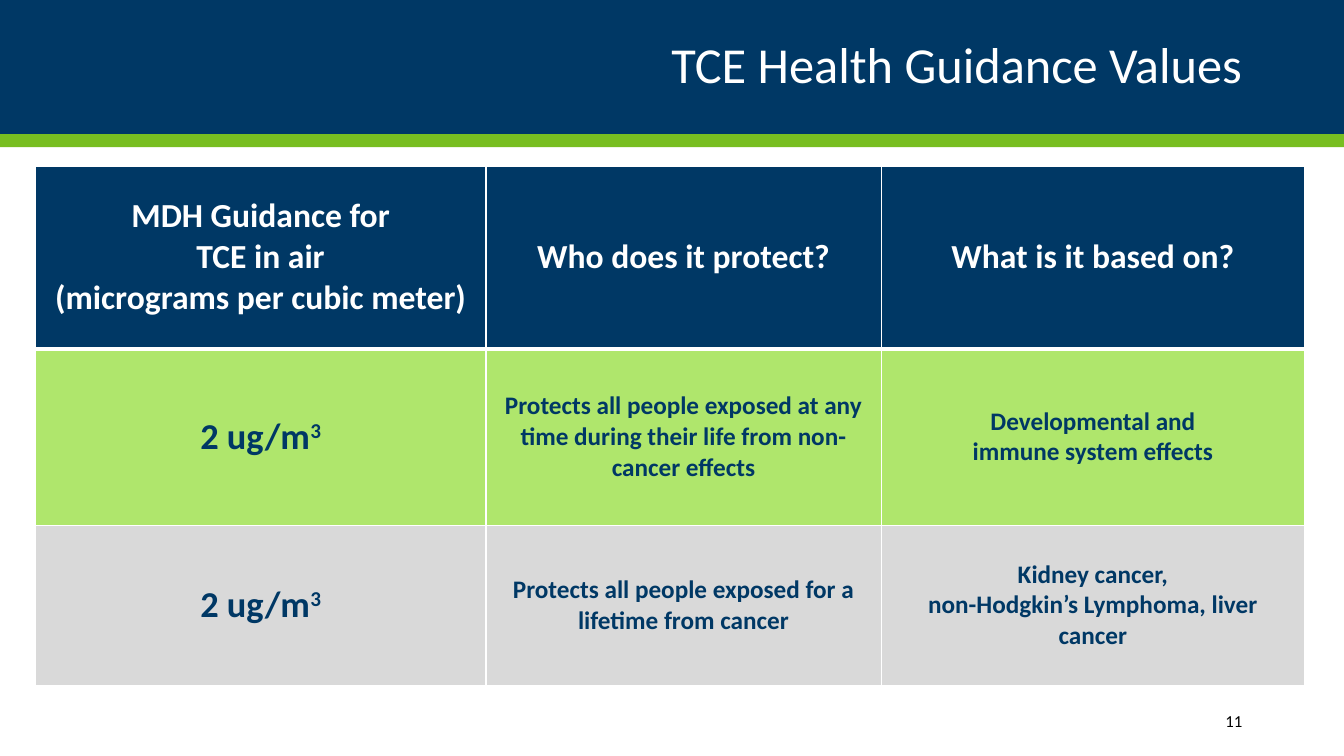
"""Builds the slide of TCE health guidance values."""
from lxml.etree import SubElement
from pptx import Presentation
from pptx.dml.color import RGBColor
from pptx.enum.shapes import MSO_SHAPE
from pptx.enum.text import MSO_ANCHOR, PP_ALIGN
from pptx.oxml.ns import qn
from pptx.util import Inches, Pt

COLORS = {
    "navy": "003865",
    "green": "78BE21",
    "lime": "AFE66C",
    "gray": "D9D9D9",
    "white": "FFFFFF",
    "black": "000000",
}

COLUMN_WIDTHS = [4.47, 3.92, 4.2]
ROW_HEIGHTS = [1.81, 1.75, 1.59]
ROW_FILLS = ["navy", "lime", "gray"]
GUIDANCE = [
    [
        "MDH Guidance for\nTCE in air\n(micrograms per cubic meter)",
        "Who does it protect?",
        "What is it based on?",
    ],
    [
        "2 ug/m^3",
        "Protects all people exposed at any time during their life from non-cancer effects",
        "Developmental and\nimmune system effects",
    ],
    [
        "2 ug/m^3",
        "Protects all people exposed for a lifetime from cancer",
        "Kidney cancer,\nnon-Hodgkin’s Lymphoma, liver cancer",
    ],
]


def rgb(name):
    return RGBColor.from_string(COLORS[name])


def write_text(frame, text, size, color, bold=False, align=PP_ALIGN.CENTER,
               spacing=None, font="Calibri"):
    frame.word_wrap = True
    for index, line in enumerate(text.split("\n")):
        paragraph = frame.paragraphs[0] if index == 0 else frame.add_paragraph()
        paragraph.alignment = align
        paragraph.line_spacing = spacing
        for level, part in enumerate(line.split("^")):
            run = paragraph.add_run()
            run.text = part
            run.font.name = font
            run.font.size = Pt(size)
            run.font.bold = bold
            run.font.color.rgb = rgb(color)
            if level:
                run._r.get_or_add_rPr().set("baseline", "30000")


class GuidanceSlide:
    def __init__(self, slide, border="white"):
        self.slide = slide
        self.border = border

    def band(self, top, height, color):
        band = self.slide.shapes.add_shape(
            MSO_SHAPE.RECTANGLE, 0, Inches(top), Inches(13.33), Inches(height))
        band.shadow.inherit = False
        band.fill.solid()
        band.fill.fore_color.rgb = rgb(color)
        band.line.fill.background()

    def text(self, left, top, width, height, text, **style):
        frame = self.slide.shapes.add_textbox(
            Inches(left), Inches(top), Inches(width), Inches(height)).text_frame
        frame.vertical_anchor = MSO_ANCHOR.MIDDLE
        write_text(frame, text, **style)

    def cell_borders(self, cell, top, bottom):
        properties = cell._tc.get_or_add_tcPr()
        for side, width in {"L": 1, "R": 1, "T": top, "B": bottom}.items():
            line = SubElement(properties, qn(f"a:ln{side}"), w=str(Pt(width)))
            fill = SubElement(line, qn("a:solidFill"))
            SubElement(fill, qn("a:srgbClr"), val=COLORS[self.border])

    def table(self, left, top, rows):
        table = self.slide.shapes.add_table(
            len(rows), len(COLUMN_WIDTHS), Inches(left), Inches(top),
            Inches(sum(COLUMN_WIDTHS)), Inches(sum(ROW_HEIGHTS))).table
        table.horz_banding = False
        for column, width in zip(table.columns, COLUMN_WIDTHS):
            column.width = Inches(width)
        for r, texts in enumerate(rows):
            table.rows[r].height = Inches(ROW_HEIGHTS[r])
            for c, text in enumerate(texts):
                cell = table.cell(r, c)
                self.cell_borders(cell, 3 if r == 1 else 1, 3 if r == 0 else 1)
                cell.fill.solid()
                cell.fill.fore_color.rgb = rgb(ROW_FILLS[r])
                cell.vertical_anchor = MSO_ANCHOR.MIDDLE
                size = 24 if r == 0 else 26 if c == 0 else 18
                write_text(cell.text_frame, text, size=size, bold=True,
                           color="white" if r == 0 else "navy")


def main():
    presentation = Presentation()
    presentation.slide_width = Inches(13.33)
    presentation.slide_height = Inches(7.5)
    page = GuidanceSlide(presentation.slides.add_slide(presentation.slide_layouts[6]))
    page.band(0, 1.33, "navy")
    page.band(1.33, 0.13, "green")
    page.text(0.92, 0.17, 11.5, 1, "TCE Health Guidance Values", size=36,
              color="white", align=PP_ALIGN.RIGHT, spacing=0.9)
    page.text(10.82, 6.95, 1.6, 0.4, "11", size=12, color="black",
              align=PP_ALIGN.RIGHT)
    page.table(0.35, 1.65, GUIDANCE)
    presentation.save("out.pptx")


if __name__ == "__main__":
    main()
